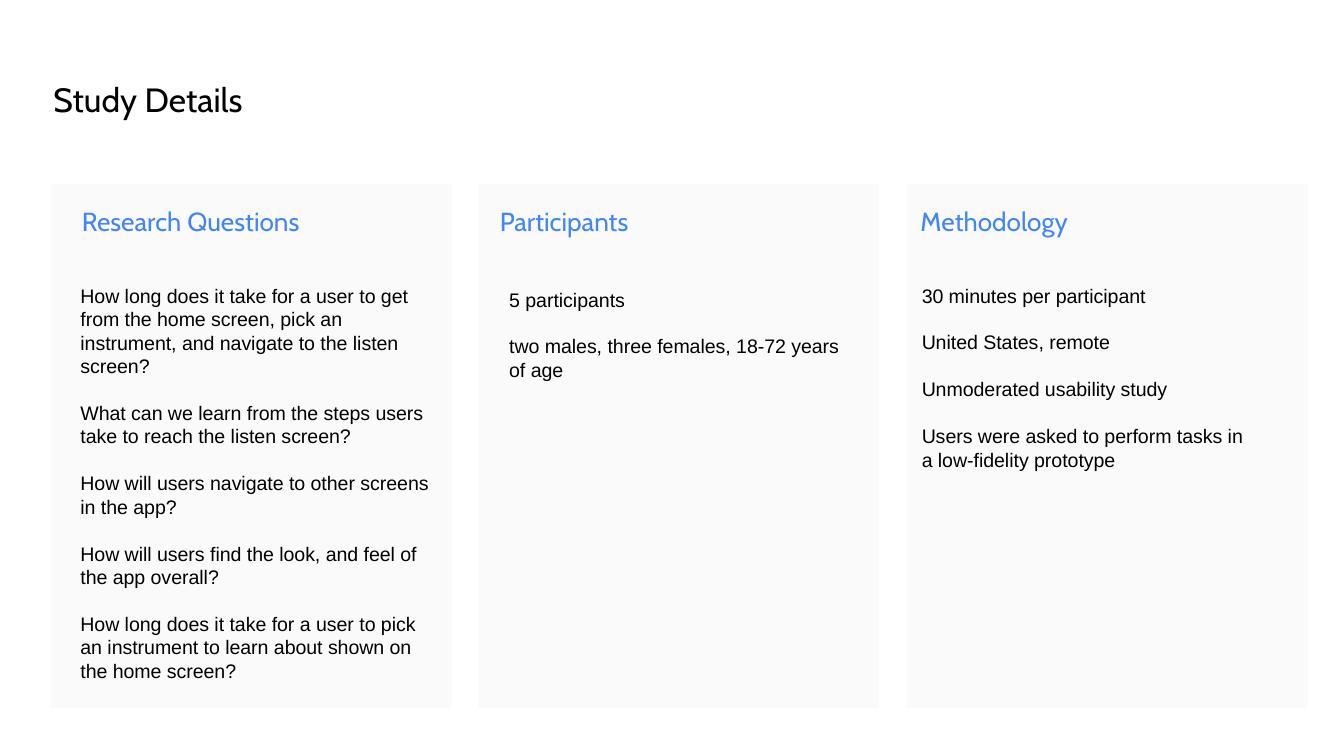
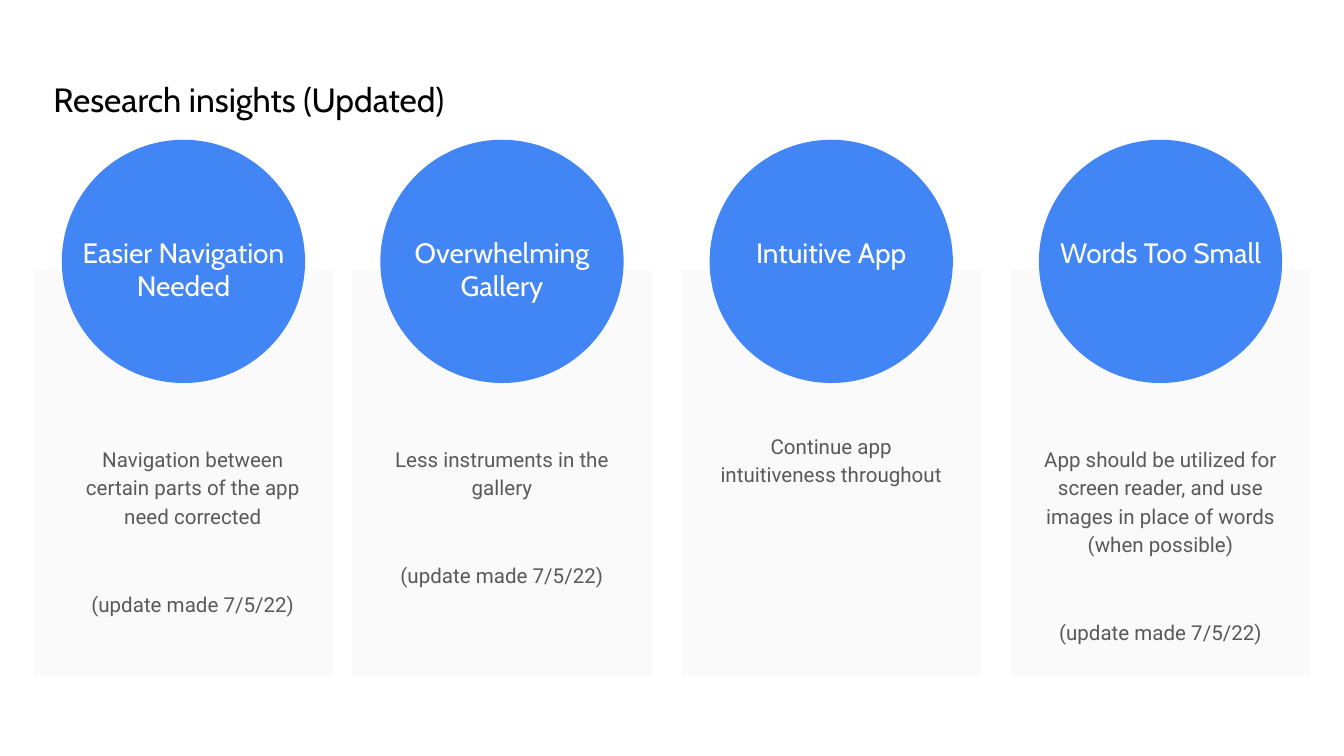
import pptx
import pptx.dml.color
import pptx.enum.shapes
import pptx.enum.text
import pptx.util

PIXEL = 9144  # EMU; 100 px to the inch
SLIDE_WIDTH = 1000 * PIXEL
SLIDE_HEIGHT = SLIDE_WIDTH * 9 // 16
INSET = 10

BLACK = pptx.dml.color.RGBColor(0x00, 0x00, 0x00)
WHITE = pptx.dml.color.RGBColor(0xFF, 0xFF, 0xFF)
BLUE = pptx.dml.color.RGBColor(0x42, 0x85, 0xF4)
GREY = pptx.dml.color.RGBColor(0x59, 0x59, 0x59)
PANEL = pptx.dml.color.RGBColor(0xFA, 0xFA, 0xFA)

LEFT = pptx.enum.text.PP_ALIGN.LEFT
CENTER = pptx.enum.text.PP_ALIGN.CENTER
RECTANGLE = pptx.enum.shapes.MSO_SHAPE.RECTANGLE
OVAL = pptx.enum.shapes.MSO_SHAPE.OVAL

UPDATE_NOTE = "(update made 7/5/22)"

# Heading, heading left, text box (left, top, width, height), paragraphs
STUDY_COLUMNS = [
    ("Research Questions", 51, (50, 201, 281, 312), [
        "How long does it take for a user to get from the home screen, "
        "pick an instrument, and navigate to the listen screen?",
        "What can we learn from the steps users take to reach the listen screen?",
        "How will users navigate to other screens in the app?",
        "How will users find the look, and feel of the app overall?",
        "How long does it take for a user to pick an instrument to learn "
        "about shown on the home screen?",
    ]),
    ("Participants", 362, (369, 204, 271, 324), [
        "5 participants",
        "two males, three females, 18-72 years of age",
    ]),
    ("Methodology", 675, (676, 201, 271, 306), [
        "30 minutes per participant",
        "United States, remote",
        "Unmoderated usability study",
        "Users were asked to perform tasks in a low-fidelity prototype",
    ]),
]

# Panel left, text left, heading, paragraphs
INSIGHTS = [
    (25, 46, "Easier Navigation Needed",
     ["Navigation between certain parts of the app need corrected", UPDATE_NOTE]),
    (262, 276, "Overwhelming Gallery",
     ["Less instruments in the gallery", UPDATE_NOTE]),
    (507, 521, "Intuitive App",
     ["Continue app intuitiveness throughout"]),
    (752, 766, "Words Too Small",
     ["App should be utilized for screen reader, and use images in place "
      "of words (when possible)", UPDATE_NOTE]),
]


def add_block(slide, kind, left, top, width, height, color):
    """Add a plain filled shape without outline."""
    shape = slide.shapes.add_shape(
        kind, left * PIXEL, top * PIXEL, width * PIXEL, height * PIXEL)
    shape.shadow.inherit = False
    shape.fill.solid()
    shape.fill.fore_color.rgb = color
    shape.line.fill.background()


def add_text(slide, box, paragraphs, font, size, color, alignment=LEFT,
             line_spacing=1.0, gap=0, top_inset=INSET):
    """Add a text box with gap points between its paragraphs."""
    shape = slide.shapes.add_textbox(*(length * PIXEL for length in box))
    frame = shape.text_frame
    frame.word_wrap = True
    frame.margin_left = frame.margin_right = frame.margin_bottom = INSET * PIXEL
    frame.margin_top = top_inset * PIXEL
    frame.text = "\n".join(paragraphs)
    for paragraph in frame.paragraphs:
        paragraph.alignment = alignment
        paragraph.line_spacing = line_spacing
        paragraph.space_after = pptx.util.Pt(gap)
        paragraph.font.name = font
        paragraph.font.size = pptx.util.Pt(size)
        paragraph.font.color.rgb = color


def add_titled_slide(presentation, title, width, height):
    slide = presentation.slides.add_slide(presentation.slide_layouts[6])
    add_text(slide, (30, 44, width, height), [title], "Cabin", 18, BLACK,
             line_spacing=1.15)
    return slide


def add_study_column(slide, index, heading, heading_left, box, paragraphs):
    add_block(slide, RECTANGLE, 38 + index * 637 // 2, 137, 298, 390, PANEL)
    add_text(slide, (heading_left, 143, 271, 31), [heading], "Cabin", 14, BLUE)
    add_text(slide, box, paragraphs, "Arial", 10.5, BLACK, gap=12.5)


def add_insight(slide, left, text_left, heading, paragraphs):
    add_block(slide, RECTANGLE, left, 201, 223, 302, PANEL)
    add_block(slide, OVAL, left + 21, 104, 181, 181, BLUE)
    add_text(slide, (left + 14, 165, 195, 59), [heading], "Cabin", 15, WHITE,
             CENTER)
    add_text(slide, (text_left, 278, 195, 147), paragraphs, "Roboto", 11, GREY,
             CENTER, line_spacing=1.15, gap=32, top_inset=52)


def main():
    presentation = pptx.Presentation()
    presentation.slide_width = SLIDE_WIDTH
    presentation.slide_height = SLIDE_HEIGHT

    study = add_titled_slide(presentation, "Study Details", 193, 83)
    for index, column in enumerate(STUDY_COLUMNS):
        add_study_column(study, index, *column)

    insights = add_titled_slide(presentation, "Research insights (Updated)", 504, 53)
    for insight in INSIGHTS:
        add_insight(insights, *insight)

    presentation.save("out.pptx")


if __name__ == "__main__":
    main()
